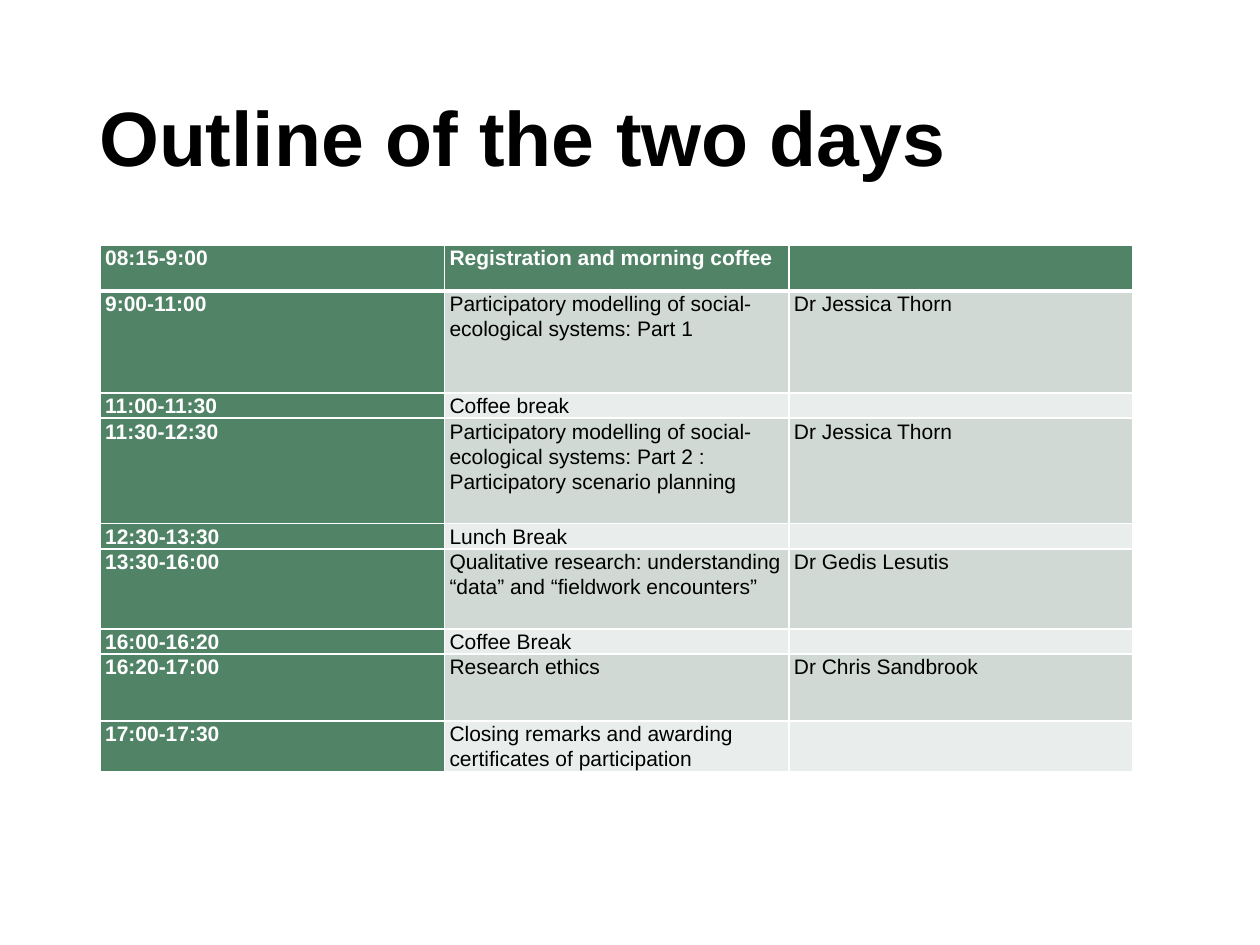
import pptx
import pptx.dml.color
import pptx.enum.text
import pptx.oxml
import pptx.util
from lxml import etree

Pt = pptx.util.Pt
RGBColor = pptx.dml.color.RGBColor

FONT = "Arial"
COLOURS = {
    "ink": "000000",
    "white": "FFFFFF",
    "green": "518367",
    "session": "D0D9D3",
    "pause": "E9EDEB",
}
# time, activity, speaker, row height in points
PROGRAMME = [
    ("08:15-9:00", "Registration and morning coffee", "", 26.3),
    ("9:00-11:00", "Participatory modelling of social-ecological systems: Part 1",
     "Dr Jessica Thorn", 58.3),
    ("11:00-11:30", "Coffee break", "", 14.4),
    ("11:30-12:30", "Participatory modelling of social-ecological systems: Part 2 : "
     "Participatory scenario planning", "Dr Jessica Thorn", 60.2),
    ("12:30-13:30", "Lunch Break", "", 14.4),
    ("13:30-16:00", "Qualitative research: understanding “data” and “fieldwork encounters”",
     "Dr Gedis Lesutis", 45.8),
    ("16:00-16:20", "Coffee Break", "", 14.4),
    ("16:20-17:00", "Research ethics", "Dr Chris Sandbrook", 38.2),
    ("17:00-17:30", "Closing remarks and awarding certificates of participation", "", 28.8),
]


def write(frame, text, size, colour, bold=False, spacing=1.0):
    paragraph = frame.paragraphs[0]
    paragraph.alignment = pptx.enum.text.PP_ALIGN.LEFT
    paragraph.line_spacing = spacing
    font = paragraph.font
    if text:
        run = paragraph.add_run()
        run.text = text
        font = run.font
    font.name = FONT
    font.size = Pt(size)
    font.bold = bold
    font.color.rgb = RGBColor.from_string(COLOURS[colour])


def add_borders(cell, colour, widths):
    """Draw the cell's edges; widths maps each side (L, R, T, B) to points."""
    properties = cell._tc.get_or_add_tcPr()
    for side, width in widths.items():
        line = etree.SubElement(properties, pptx.oxml.ns.qn(f"a:ln{side}"), w=str(Pt(width)))
        fill = etree.SubElement(line, pptx.oxml.ns.qn("a:solidFill"))
        etree.SubElement(fill, pptx.oxml.ns.qn("a:srgbClr"), val=COLOURS[colour])


def place_title(slide, left, top, width, height):
    title = slide.shapes.title
    title.left, title.top, title.width, title.height = map(Pt, (left, top, width, height))
    title.text_frame.word_wrap = True
    title.text_frame.vertical_anchor = pptx.enum.text.MSO_ANCHOR.MIDDLE
    write(title.text_frame, "Outline of the two days", 44, "ink", bold=True, spacing=0.9)


def place_programme(slide, left, top, width):
    height = sum(entry[-1] for entry in PROGRAMME)
    programme = slide.shapes.add_table(
        len(PROGRAMME), 3, Pt(left), Pt(top), Pt(width), Pt(height)).table
    for column in programme.columns:
        column.width = Pt(width / 3)
    for row, (*texts, row_height) in enumerate(PROGRAMME):
        programme.rows[row].height = Pt(row_height)
        for column, text in enumerate(texts):
            cell = programme.cell(row, column)
            cell.margin_left = cell.margin_right = Pt(2.9)
            cell.margin_top = cell.margin_bottom = 0
            heading = row == 0 or column == 0
            write(cell.text_frame, text, 12, "white" if heading else "ink",
                  bold=heading, spacing=Pt(14.4))
            add_borders(cell, "white", {"L": 1, "R": 1, "T": 3 if row == 1 else 1,
                                        "B": 3 if row == 0 else 1})
            shade = "green" if heading else "session" if row % 2 else "pause"
            cell.fill.solid()
            cell.fill.fore_color.rgb = RGBColor.from_string(COLOURS[shade])


def main():
    deck = pptx.Presentation()
    deck.slide_width, deck.slide_height = Pt(720), Pt(540)
    slide = deck.slides.add_slide(deck.slide_layouts[5])
    place_title(slide, 49.5, 28.75, 621, 104.4)
    place_programme(slide, 57.2, 140, 590.4)
    deck.save("out.pptx")


if __name__ == "__main__":
    main()
